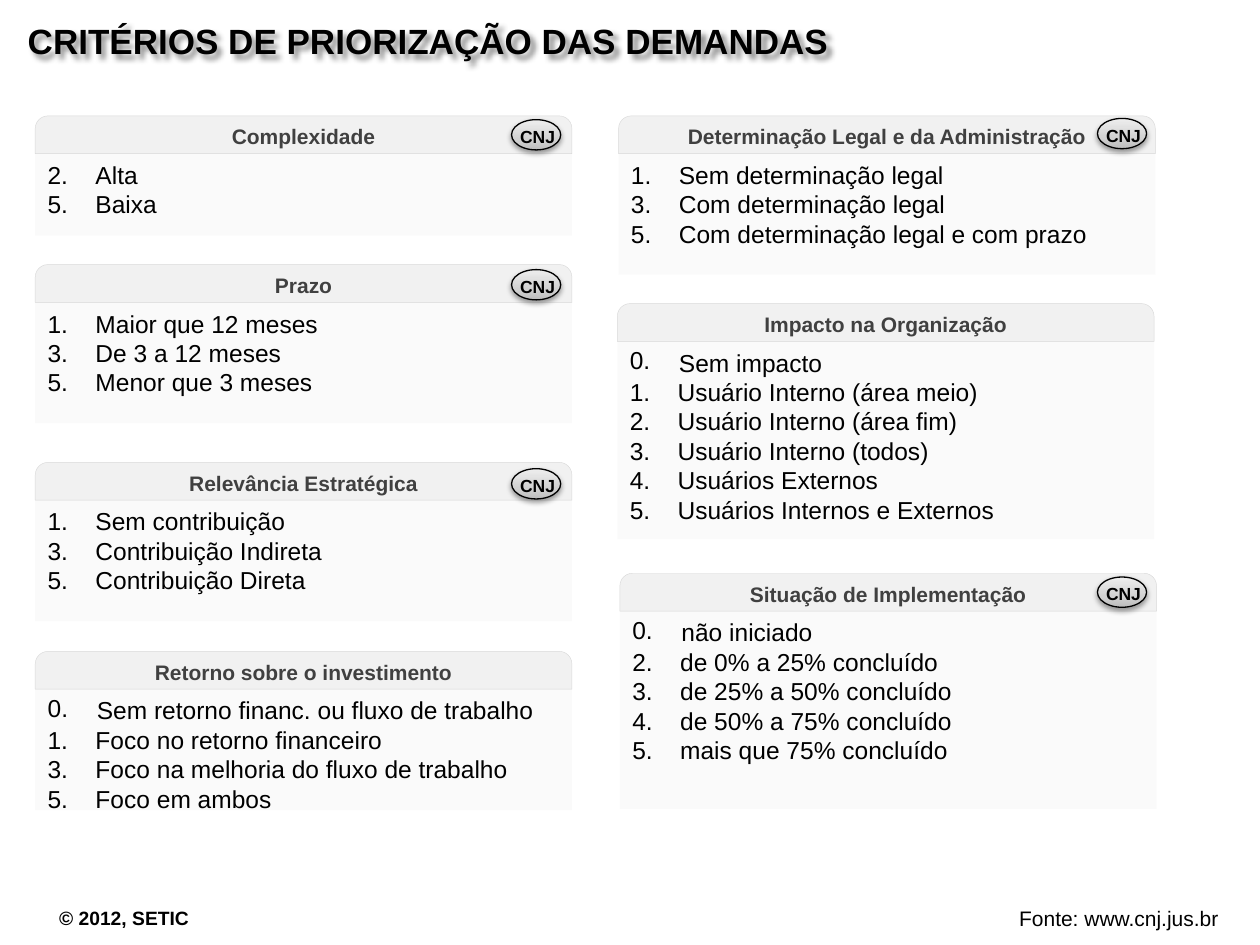
"""Build the slide of criteria for ranking demands."""
from pptx import Presentation
from pptx.dml.color import RGBColor
from pptx.enum.shapes import MSO_SHAPE
from pptx.enum.text import MSO_ANCHOR, PP_ALIGN
from pptx.oxml import parse_xml
from pptx.oxml.ns import nsdecls, qn
from pptx.util import Inches, Pt

ROUND, RECT, OVAL = (MSO_SHAPE.ROUND_2_SAME_RECTANGLE, MSO_SHAPE.RECTANGLE,
                     MSO_SHAPE.OVAL)
TOP, MIDDLE = MSO_ANCHOR.TOP, MSO_ANCHOR.MIDDLE
LEFT, CENTER = PP_ALIGN.LEFT, PP_ALIGN.CENTER
BLACK = RGBColor(0x00, 0x00, 0x00)
DARK = RGBColor(0x40, 0x40, 0x40)
GRAY = RGBColor(0xA6, 0xA6, 0xA6)
PALE = RGBColor(0xD9, 0xD9, 0xD9)
STOPS = [(0, "BDBDBD"), (35, "D1D1D1"), (100, "EEEEEE")]

TITLE = "CRITÉRIOS DE PRIORIZAÇÃO DAS DEMANDAS"
NOTES = [
    ("© 2012, SETIC", (0.37, 7.14, 1.28, 0.29), {"size": Pt(11), "bold": True}, False),
    ("Fonte: www.cnj.jus.br", (7.99, 7.14, 1.89, 0.23), {"size": Pt(12)}, True),
]
CARDS = [
    ("Complexidade", 0.28, 0.92, 0.65, (4.06, 0.95),
     [(2, "Alta"), (5, "Baixa")]),
    ("Prazo", 0.28, 2.1, 0.96, (4.06, 2.14),
     [(1, "Maior que 12 meses"), (3, "De 3 a 12 meses"), (5, "Menor que 3 meses")]),
    ("Relevância Estratégica", 0.28, 3.67, 0.96, (4.06, 3.72),
     [(1, "Sem contribuição"), (3, "Contribuição Indireta"),
      (5, "Contribuição Direta")]),
    ("Retorno sobre o investimento", 0.28, 5.17, 0.96, None,
     [(0, "Sem retorno financ. ou fluxo de trabalho"),
      (1, "Foco no retorno financeiro"),
      (3, "Foco na melhoria do fluxo de trabalho"), (5, "Foco em ambos")]),
    ("Determinação Legal e da Administração", 4.91, 0.92, 0.96, (8.71, 0.94),
     [(1, "Sem determinação legal"), (3, "Com determinação legal"),
      (5, "Com determinação legal e com prazo")]),
    ("Impacto na Organização", 4.9, 2.41, 1.57, None,
     [(0, "Sem impacto"), (1, "Usuário Interno (área meio)"),
      (2, "Usuário Interno (área fim)"), (3, "Usuário Interno (todos)"),
      (4, "Usuários Externos"), (5, "Usuários Internos e Externos")]),
    ("Situação de Implementação", 4.92, 4.55, 1.57, (8.71, 4.58),
     [(0, "não iniciado"), (2, "de 0% a 25% concluído"),
      (3, "de 25% a 50% concluído"), (4, "de 50% a 75% concluído"),
      (5, "mais que 75% concluído")]),
]
WIDE, HEAD = 4.26, 0.3
BODY = {"size": Pt(14)}
BOLD = {"size": Pt(12), "bold": True, "color": DARK}
MARK = {"size": Pt(10), "bold": True}


def style(para, look, align=LEFT):
    para.alignment = align
    look = {"name": "Arial", "color": BLACK, **look}
    para.runs[0].font.color.rgb = look.pop("color")
    for key, value in look.items():
        setattr(para.runs[0].font, key, value)


def label(shapes, text, box, look, wrap=True):
    item = shapes.add_textbox(*map(Inches, box))
    item.text_frame.word_wrap = wrap
    item.text_frame.text = text
    style(item.text_frame.paragraphs[0], look)


def panel(shapes, kind, box, alpha):
    item = shapes.add_shape(kind, *map(Inches, box))
    item.shadow.inherit = False
    item.fill.solid()
    item.fill.fore_color.rgb = GRAY
    tone = item.fill._xPr.find(".//" + qn("a:srgbClr"))
    tone.append(parse_xml(f'<a:alpha {nsdecls("a")} val="{alpha * 1000}"/>'))
    item.line.fill.background()
    item.text_frame.word_wrap = True
    return item


def shade(item, alpha, blur, dist, angle):
    item.shadow.inherit = False
    item._element.spPr.find(qn("a:effectLst")).append(parse_xml(
        f'<a:outerShdw {nsdecls("a")} blurRad="{Pt(blur)}" dist="{Pt(dist)}" '
        f'dir="{angle * 60000}" rotWithShape="0"><a:srgbClr val="000000">'
        f'<a:alpha val="{alpha * 1000}"/></a:srgbClr></a:outerShdw>'))


def number(para, start):
    props = para._p.get_or_add_pPr()
    props.set("marL", str(Inches(0.38 if start else 0.39)))
    props.set("indent", str(Inches(-0.38 if start else 0)))
    if start:
        props.append(parse_xml(f'<a:buFont {nsdecls("a")} typeface="+mj-lt"/>'))
        props.append(parse_xml(f'<a:buAutoNum {nsdecls("a")} type="arabicPeriod" '
                               f'startAt="{start}"/>'))


def badge(shapes, left, top):
    group = shapes.add_group_shape().shapes
    oval = group.add_shape(OVAL, *map(Inches, (left, top, 0.39, 0.24)))
    oval.line.color.rgb = BLACK
    oval.line.width = Pt(0.75)
    stops = "".join(f'<a:gs pos="{spot * 1000}"><a:srgbClr val="{tone}"/></a:gs>'
                    for spot, tone in STOPS)
    oval._element.spPr.find(qn("a:prstGeom")).addnext(parse_xml(
        f'<a:gradFill {nsdecls("a")} rotWithShape="1"><a:gsLst>{stops}</a:gsLst>'
        '<a:lin ang="16200000" scaled="0"/></a:gradFill>'))
    shade(oval, 38, 3.1, 1.6, 90)
    label(group, "CNJ", (left - 0.03, top, 0.5, 0.27), MARK)


def card(shapes, name, left, top, high, mark, items):
    head = panel(shapes, ROUND, (left, top, WIDE, HEAD), 15)
    head.adjustments[0], head.adjustments[1] = 0.335, 0
    head.line.color.rgb = PALE
    head.line.width = Pt(0.25)
    frame = head.text_frame
    for side in ("left", "top", "right", "bottom"):
        setattr(frame, "margin_" + side, Inches(0.04))
    frame.vertical_anchor = MIDDLE
    frame.text = name
    style(frame.paragraphs[0], BOLD, CENTER)

    frame = panel(shapes, RECT, (left, top + HEAD, WIDE, high), 5).text_frame
    frame.vertical_anchor = TOP
    frame.text = "\n".join(text for _, text in items)
    last = start = 0
    for para, (rank, _) in zip(frame.paragraphs, items):
        start = start if start and rank == last + 1 else rank
        last = rank
        number(para, start)
        style(para, BODY)
    if items[0][0] == 0:
        label(shapes, "0.", (left, top + HEAD - 0.02, 0.38, 0.34), BODY)
    if mark:
        badge(shapes, *mark)


def main():
    deck = Presentation()
    deck.slide_width, deck.slide_height = Inches(10), Inches(7.5)
    slide = deck.slides.add_slide(deck.slide_layouts[5])
    title = slide.shapes.title
    title.left, title.top, title.width, title.height = map(
        Inches, (0.12, 0.05, 8.75, 0.55))
    title.text_frame.text = TITLE
    title.text_frame.vertical_anchor = MIDDLE
    style(title.text_frame.paragraphs[0], {"size": Pt(20), "bold": True})
    shade(title, 43, 3, 3, 45)
    for row in CARDS:
        card(slide.shapes, *row)
    for note in NOTES:
        label(slide.shapes, *note)
    deck.save("out.pptx")


if __name__ == "__main__":
    main()
